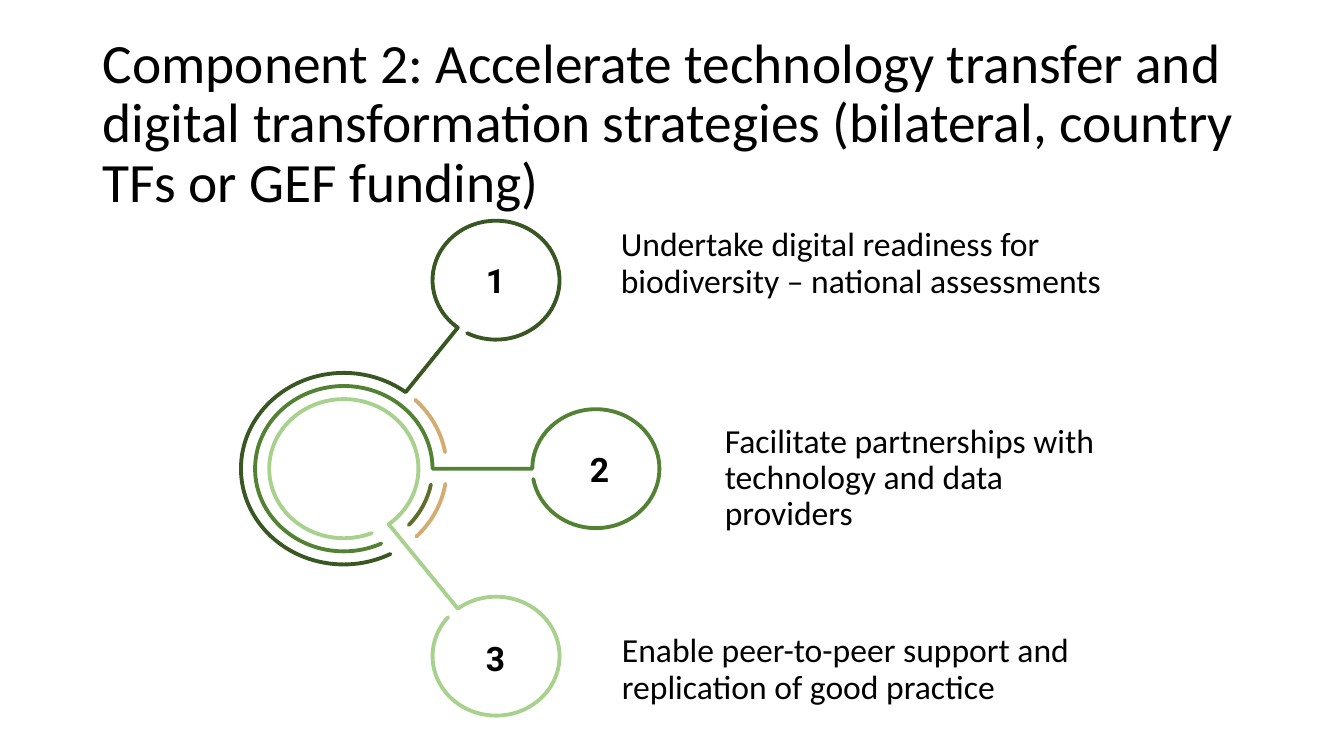
"""Build the Component 2 slide: a hub of three rings leading to numbered actions."""
import math

import pptx
import pptx.dml.color
import pptx.enum.text
import pptx.oxml.ns
import pptx.util

PX = 9144
BLACK = pptx.dml.color.RGBColor(0x00, 0x00, 0x00)
DARK_GREEN = pptx.dml.color.RGBColor(0x38, 0x57, 0x23)
GREEN = pptx.dml.color.RGBColor(0x54, 0x82, 0x35)
LIGHT_GREEN = pptx.dml.color.RGBColor(0xA9, 0xD1, 0x8E)
TAN = pptx.dml.color.RGBColor(0xD2, 0xAC, 0x70)
OLIVE = pptx.dml.color.RGBColor(0x60, 0x6E, 0x2C)

HUB = (341, 465)
OUTER, MIDDLE, INNER = (102, 95), (88, 82), (74, 69)
NODE = (63, 59)


def arc_points(center, radii, stops):
    """Return the Bezier points, in EMU, of a clockwise arc through angles in degrees."""
    points = []
    for start, end in zip(stops, stops[1:]):
        first, last = math.radians(start), math.radians(end)
        reach = 4 / 3 * math.tan((last - first) / 4)
        for angle, pull in ((first, 0), (first, reach), (last, -reach), (last, 0)):
            if pull or angle == last or not points:
                x = center[0] + radii[0] * (math.cos(angle) - pull * math.sin(angle))
                y = center[1] + radii[1] * (math.sin(angle) + pull * math.cos(angle))
                points.append((round(x * PX), round(y * PX)))
    return points


def write_text(shape, box, text, size, font="Calibri", bold=False, before=10,
               alignment=pptx.enum.text.PP_ALIGN.LEFT,
               anchor=pptx.enum.text.MSO_ANCHOR.TOP):
    """Place a shape at a px box and write one formatted paragraph into it."""
    shape.left, shape.top, shape.width, shape.height = [value * PX for value in box]
    frame = shape.text_frame
    frame.word_wrap = True
    frame.auto_size = pptx.enum.text.MSO_AUTO_SIZE.NONE
    frame.vertical_anchor = anchor
    paragraph = frame.paragraphs[0]
    paragraph.alignment = alignment
    paragraph.line_spacing = 0.9
    paragraph.space_before = pptx.util.Pt(before)
    run = paragraph.add_run()
    run.text = text
    run.font.name = font
    run.font.size = pptx.util.Pt(size)
    run.font.bold = bold
    run.font.color.rgb = BLACK


presentation = pptx.Presentation()
presentation.slide_width = 1333 * PX
presentation.slide_height = 750 * PX
slide = presentation.slides.add_slide(presentation.slide_layouts[5])

write_text(slide.shapes.title, (92, 40, 1150, 168),
           "Component 2: Accelerate technology transfer and digital transformation "
           "strategies (bilateral, country TFs or GEF funding)",
           39.6, before=0, anchor=pptx.enum.text.MSO_ANCHOR.MIDDLE)

actions = [
    ((606, 221, 524, 71),
     "Undertake digital readiness for biodiversity – national assessments"),
    ((709, 416, 402, 116),
     "Facilitate partnerships with technology and data providers"),
    ((607, 624, 504, 86),
     "Enable peer-to-peer support and replication of good practice"),
]
for box, action in actions:
    write_text(slide.shapes.add_textbox(0, 0, 0, 0), box, action, 24)

diagram = slide.shapes.add_group_shape()
outlines = [
    (DARK_GREEN, [(HUB, OUTER, (63, 90, 180, 270, 307)),
                  ((492, 278), NODE, (127, 217, 307, 397, 477))]),
    (TAN, [(HUB, OUTER, (-46, -10))]),
    (TAN, [(HUB, OUTER, (9, 45))]),
    (GREEN, [(HUB, MIDDLE, (65, 90, 180, 270, 307, 360)),
             ((591, 465), NODE, (180, 270, 360, 450, 530))]),
    (OLIVE, [(HUB, MIDDLE, (11, 43))]),
    (LIGHT_GREEN, [(HUB, INNER, (68, 90, 180, 270, 307, 360, 413)),
                   ((492, 651), NODE, (233, 323, 413, 503, 581))]),
]
for color, arcs in outlines:
    points = arc_points(*arcs[0])
    for arc in arcs[1:]:
        node_points = arc_points(*arc)
        points += [points[-1], node_points[0]] + node_points
    builder = diagram.shapes.build_freeform(*points[0])
    builder.add_line_segments(points[1:], close=False)
    outline = builder.convert_to_shape()
    segments = list(outline._element.iter(pptx.oxml.ns.qn("a:lnTo")))
    for curve, second, third in zip(segments[::3], segments[1::3], segments[2::3]):
        curve.tag = pptx.oxml.ns.qn("a:cubicBezTo")
        for extra in (second, third):
            curve.append(extra[0])
            extra.getparent().remove(extra)
    outline.shadow.inherit = False
    outline.fill.background()
    outline.line.color.rgb = color
    outline.line.width = pptx.util.Pt(2.75)
    outline.line._get_or_add_ln().set("cap", "rnd")

for number, left, top in (("1", 462, 257), ("2", 565, 445), ("3", 462, 632)):
    write_text(diagram.shapes.add_textbox(0, 0, 0, 0), (left, top, 59, 41), number, 24,
               font="Roboto", bold=True, alignment=pptx.enum.text.PP_ALIGN.CENTER)

presentation.save("out.pptx")
